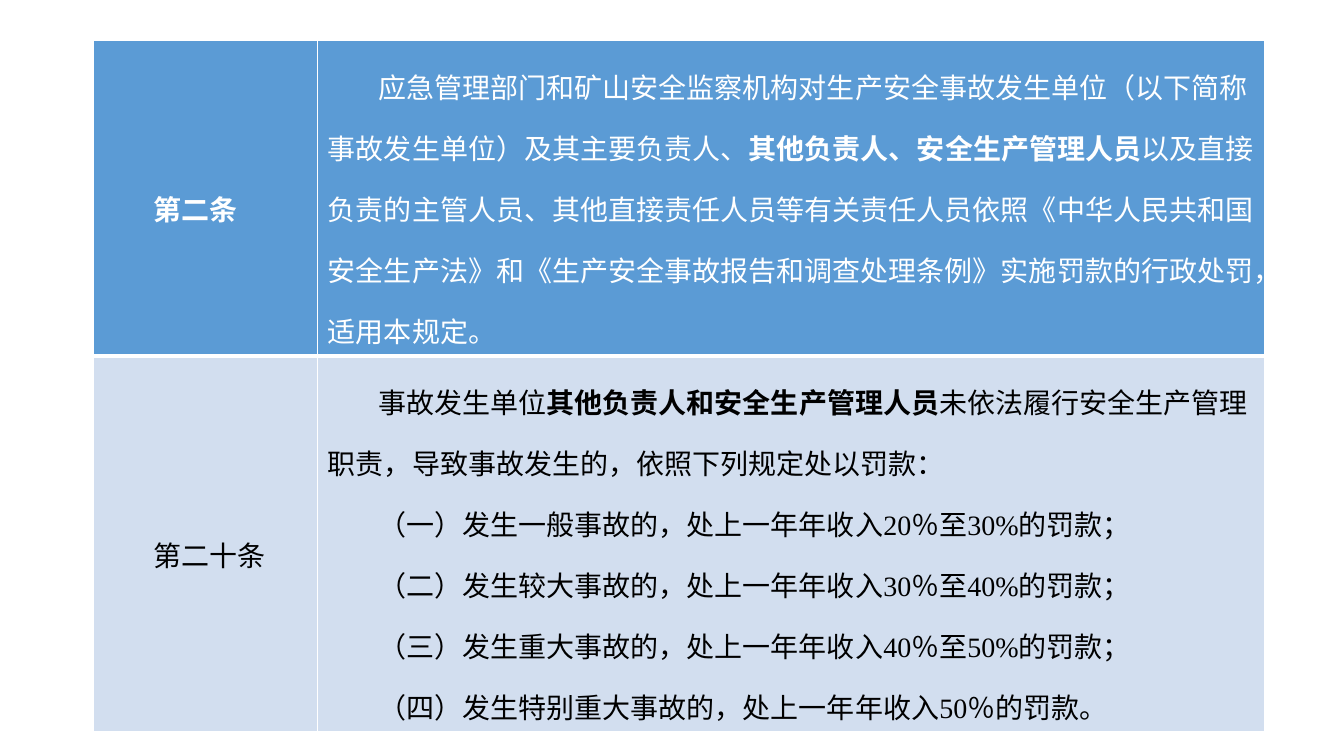
from lxml import etree
from pptx import Presentation
from pptx.dml.color import RGBColor
from pptx.enum import text
from pptx.oxml import ns
from pptx.util import Cm, Pt

COLORS = {"white": "FFFFFF", "black": "000000", "header": "5B9BD5", "body": "D2DEEF"}
CJK, LATIN = "Noto Sans CJK SC", "Times New Roman"


def set_borders(cell, widths):
    """Draw white cell borders; widths maps L, R, T, B to points."""
    tc_pr = cell._tc.get_or_add_tcPr()
    for i, (side, width) in enumerate(widths.items()):
        ln = etree.Element(ns.qn(f"a:ln{side}"), w=str(Pt(width)))
        fill = etree.SubElement(ln, ns.qn("a:solidFill"))
        etree.SubElement(fill, ns.qn("a:srgbClr"), val=COLORS["white"])
        tc_pr.insert(i, ln)


def add_paragraph(p, runs, color, latin):
    """Fill a paragraph with (text, bold) runs."""
    p.line_spacing = 1.5
    p._p.get_or_add_pPr().set("indent", str(Cm(1.27)))
    p.font.size = Pt(20)
    p.font.name = latin
    p.font.color.rgb = RGBColor.from_string(COLORS[color])
    for words, bold in runs:
        r = p.add_run()
        r.text = words
        r.font.bold = bold
        ea = etree.SubElement(r.font._element, ns.qn("a:ea"))
        ea.set("typeface", CJK)


prs = Presentation()
prs.slide_width, prs.slide_height = Cm(33.87), Cm(19.05)
s = prs.slides.add_slide(prs.slide_layouts[6])

penalties = [
    ("一", "一般", "20％至30%的罚款；"),
    ("二", "较大", "30％至40%的罚款；"),
    ("三", "重大", "40％至50%的罚款；"),
    ("四", "特别重大", "50％的罚款。"),
]
scope = [
    ("应急管理部门和矿山安全监察机构对生产安全事故发生单位（以下简称事故发生单位）"
     "及其主要负责人、", False),
    ("其他负责人、安全生产管理人员", True),
    ("以及直接负责的主管人员、其他直接责任人员等有关责任人员依照《中华人民共和国安全生产法》"
     "和《生产安全事故报告和调查处理条例》实施罚款的行政处罚，适用本规定。", False),
]
fines = [
    ("事故发生单位", False),
    ("其他负责人和安全生产管理人员", True),
    ("未依法履行安全生产管理职责，导致事故发生的，依照下列规定处以罚款：", False),
]
items = [[(f"（{number}）发生{level}事故的，处上一年年收入{fine}", False)]
         for number, level, fine in penalties]

# Each row: fill, text colour, border widths, paragraphs of both cells
rows = [
    ("header", "white", {"L": 1, "R": 1, "T": 1, "B": 3},
     [[[("第二条", True)]], [scope]]),
    ("body", "black", {"L": 1, "R": 1, "T": 3, "B": 1},
     [[[("第二十条", False)]], [fines, *items]]),
]

table = s.shapes.add_table(2, 2, Cm(2.35), Cm(1.03), Cm(29.51), Cm(17.29)).table
for column, width in zip(table.columns, (5.66, 23.85)):
    column.width = Cm(width)
for row, height in zip(table.rows, (7.87, 9.42)):
    row.height = Cm(height)

for row, (fill, color, widths, contents) in zip(table.rows, rows):
    for cell, paragraphs in zip(row.cells, contents):
        cell.fill.solid()
        cell.fill.fore_color.rgb = RGBColor.from_string(COLORS[fill])
        cell.vertical_anchor = text.MSO_ANCHOR.MIDDLE
        set_borders(cell, widths)
        tf = cell.text_frame
        for i, runs in enumerate(paragraphs):
            p = tf.add_paragraph() if i else tf.paragraphs[0]
            add_paragraph(p, runs, color, LATIN if i else CJK)

prs.save("out.pptx")
